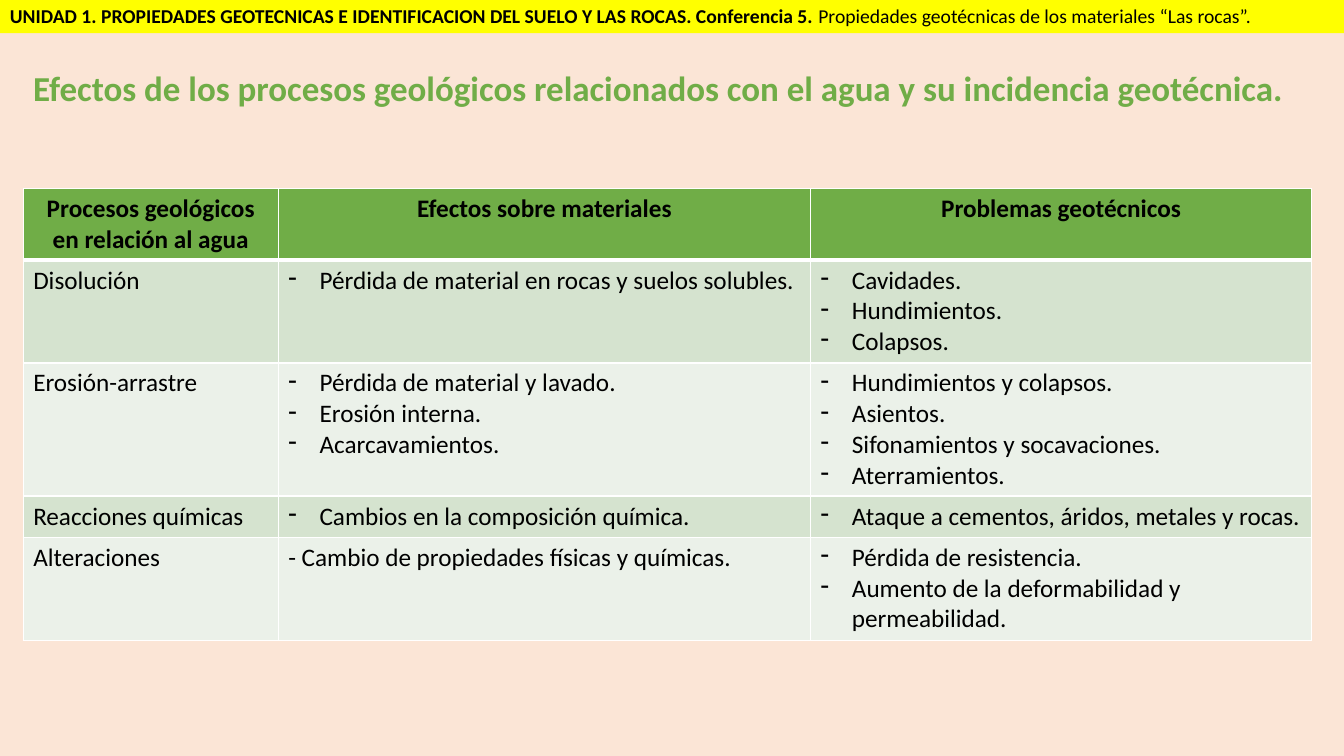
from lxml.etree import SubElement
from pptx import Presentation
from pptx.dml.color import RGBColor
from pptx.enum.shapes import MSO_SHAPE as Shape
from pptx.enum.text import MSO_ANCHOR as Anchor, PP_ALIGN as Align
from pptx.oxml.ns import qn
from pptx.util import Inches, Pt

PINK, YELLOW, GREEN = "FBE5D6", "FFFF00", "70AD47"
BLACK, WHITE = "000000", "FFFFFF"
BANDS = ["D5E3CF", "EBF1E9"]
COLUMN_WIDTHS = [2.53, 5.28, 4.97]
ROW_HEIGHTS = [0.71, 1.02, 1.32, 0.41, 1.02]
HEADERS = ["Procesos geológicos en relación al agua", "Efectos sobre materiales", "Problemas geotécnicos"]
PROCESSES = [
    ("Disolución",
     ["Pérdida de material en rocas y suelos solubles."],
     ["Cavidades.", "Hundimientos.", "Colapsos."]),
    ("Erosión-arrastre",
     ["Pérdida de material y lavado.", "Erosión interna.", "Acarcavamientos."],
     ["Hundimientos y colapsos.", "Asientos.", "Sifonamientos y socavaciones.", "Aterramientos."]),
    ("Reacciones químicas",
     ["Cambios en la composición química."],
     ["Ataque a cementos, áridos, metales y rocas."]),
    ("Alteraciones",
     "- Cambio de propiedades físicas y químicas.",
     ["Pérdida de resistencia.", "Aumento de la deformabilidad y permeabilidad."]),
]


def color(value):
    return RGBColor.from_string(value)


def paint(fill, value):
    fill.solid()
    fill.fore_color.rgb = color(value)


def style(span, size, value=BLACK, bold=False):
    span.font.name = "Calibri"
    span.font.size = Pt(size)
    span.font.bold = bold
    span.font.color.rgb = color(value)


def add_dash(para):
    properties = para._p.get_or_add_pPr()
    properties.set("marL", str(Inches(0.31)))
    properties.set("indent", str(-Inches(0.31)))
    SubElement(properties, qn("a:buFontTx"))
    SubElement(properties, qn("a:buChar"), char="-")


def add_borders(cell, top, bottom):
    properties = cell._tc.get_or_add_tcPr()
    for side, width in zip("LRTB", (1, 1, top, bottom)):
        line = SubElement(properties, qn(f"a:ln{side}"), w=str(Pt(width)))
        fill = SubElement(line, qn("a:solidFill"))
        SubElement(fill, qn("a:srgbClr"), val=WHITE)


def fill_cell(cell, content, row):
    header = row == 0
    add_borders(cell, 3 if row == 1 else 1, 3 if header else 1)
    paint(cell.fill, GREEN if header else BANDS[(row - 1) % 2])
    dashed = isinstance(content, list)
    cell.text_frame.text = "\n".join(content) if dashed else content
    for para in cell.text_frame.paragraphs:
        para.alignment = Align.CENTER if header else Align.LEFT
        if dashed:
            add_dash(para)
        style(para.runs[0], 18, bold=header)


def add_banner(page, left, top, width, height):
    box = page.shapes.add_shape(Shape.RECTANGLE, Inches(left), Inches(top), Inches(width), Inches(height))
    box.shadow.inherit = False
    paint(box.fill, YELLOW)
    box.line.fill.background()
    frame = box.text_frame
    frame.word_wrap = True
    frame.vertical_anchor = Anchor.TOP
    para = frame.paragraphs[0]
    para.alignment = Align.LEFT
    para.text = ("UNIDAD 1. PROPIEDADES GEOTECNICAS E IDENTIFICACION DEL SUELO Y LAS ROCAS. "
                 "Conferencia 5. ")
    style(para.runs[0], 14, bold=True)
    topic = para.add_run()
    topic.text = "Propiedades geotécnicas de los materiales “Las rocas”."
    style(topic, 14)


def add_title(page, left, top, width, height):
    box = page.shapes.add_textbox(Inches(left), Inches(top), Inches(width), Inches(height))
    frame = box.text_frame
    frame.word_wrap = True
    frame.text = "Efectos de los procesos geológicos relacionados con el agua y su incidencia geotécnica."
    style(frame.paragraphs[0].runs[0], 25, GREEN, True)


def add_process_table(page, left, top):
    rows = [HEADERS, *PROCESSES]
    table = page.shapes.add_table(
        len(rows), len(HEADERS), Inches(left), Inches(top),
        Inches(sum(COLUMN_WIDTHS)), Inches(sum(ROW_HEIGHTS))).table
    for column, width in zip(table.columns, COLUMN_WIDTHS):
        column.width = Inches(width)
    for row, height in zip(table.rows, ROW_HEIGHTS):
        row.height = Inches(height)
    for row, contents in enumerate(rows):
        for column, content in enumerate(contents):
            fill_cell(table.cell(row, column), content, row)


def main():
    deck = Presentation()
    deck.slide_width, deck.slide_height = Inches(13.33), Inches(7.5)
    page = deck.slides.add_slide(deck.slide_layouts[6])
    paint(page.background.fill, PINK)
    add_process_table(page, 0.23, 1.87)
    add_title(page, 0.23, 0.61, 12.65, 0.52)
    add_banner(page, 0, -0.01, 13.33, 0.34)
    deck.save("out.pptx")


if __name__ == "__main__":
    main()
